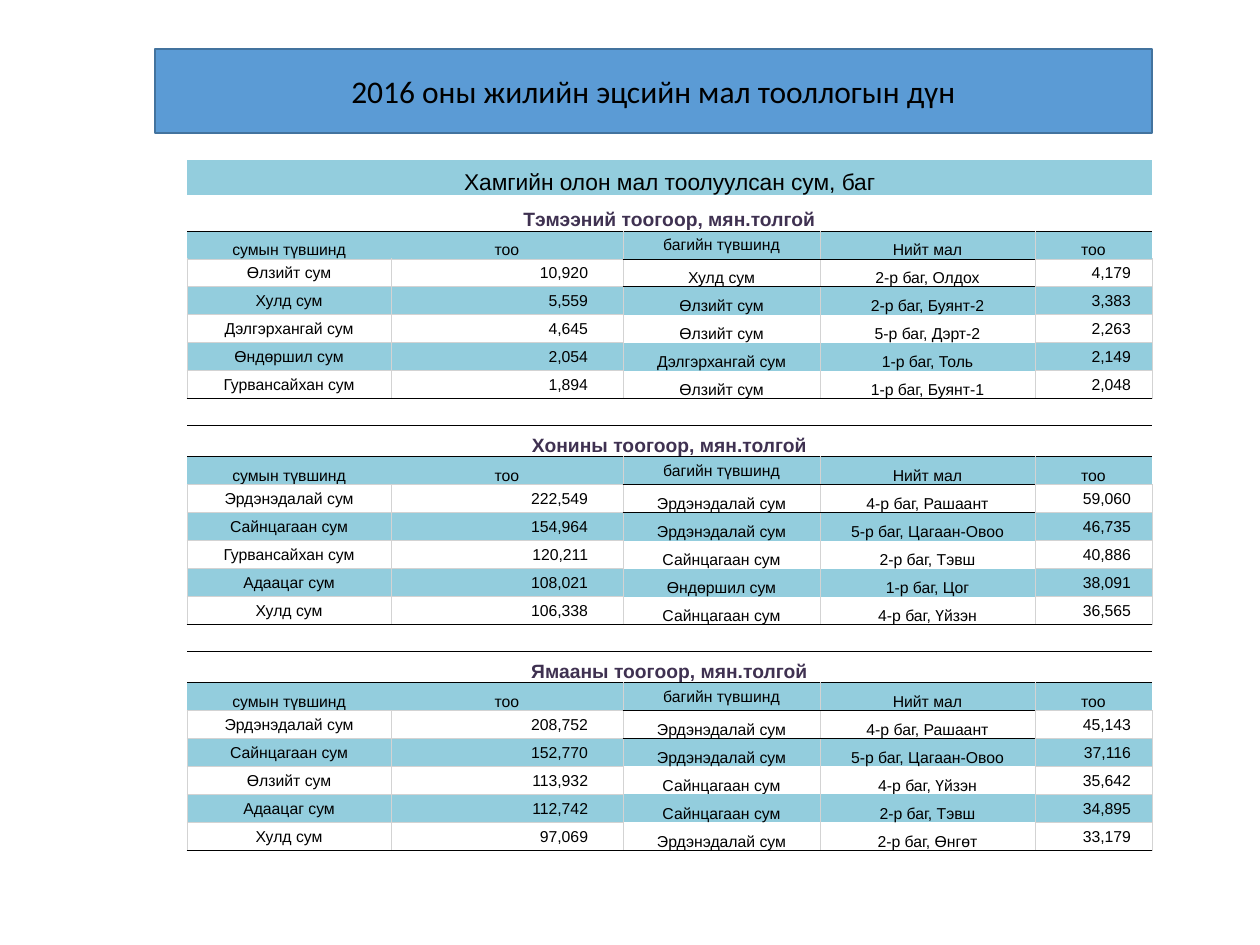
from typing import NamedTuple, Optional

from lxml.etree import SubElement
from pptx import Presentation
from pptx.dml.color import RGBColor
from pptx.enum.text import MSO_ANCHOR, PP_ALIGN
from pptx.oxml.ns import qn
from pptx.util import Emu, Pt

BLACK = RGBColor(0x00, 0x00, 0x00)
GREY = RGBColor(0xD3, 0xD3, 0xD3)
PLUM = RGBColor(0x3F, 0x31, 0x51)
TEAL = RGBColor(0x93, 0xCD, 0xDD)
BLUE = RGBColor(0x5B, 0x9B, 0xD5)
NAVY = RGBColor(0x43, 0x73, 0x9E)

SCALE = 914400 / 126
COLS = (204, 232, 197, 215, 117)
TOP_ROW, NAME_ROW, HEAD_ROW, BODY_ROW, GAP_ROW = 35, 36, 28, 28, 27
NEXT_NAME = 31
HEADS = ("сумын түвшинд", "тоо", "багийн түвшинд", "Нийт мал", "тоо")
PADS = {1: 35, 4: 21}  # right margin of the number columns
PLAIN = "{2D5ABB26-0587-4C30-8999-92F81FD0307C}"  # table style without grid


class Herd(NamedTuple):
    name: str
    rows: tuple


class Look(NamedTuple):
    size: float = 9
    color: RGBColor = BLACK
    bold: bool = False
    fill: Optional[RGBColor] = None
    anchor: MSO_ANCHOR = MSO_ANCHOR.BOTTOM
    align: PP_ALIGN = PP_ALIGN.CENTER
    pad: int = 1


HERDS = (
    Herd("Тэмээний тоогоор, мян.толгой", (
        ("Өлзийт сум", "10,920", "Хулд сум", "2-р баг, Олдох", "4,179"),
        ("Хулд сум", "5,559", "Өлзийт сум", "2-р баг, Буянт-2", "3,383"),
        ("Дэлгэрхангай сум", "4,645", "Өлзийт сум", "5-р баг, Дэрт-2", "2,263"),
        ("Өндөршил сум", "2,054", "Дэлгэрхангай сум", "1-р баг, Толь", "2,149"),
        ("Гурвансайхан сум", "1,894", "Өлзийт сум", "1-р баг, Буянт-1", "2,048"),
    )),
    Herd("Хонины тоогоор, мян.толгой", (
        ("Эрдэнэдалай сум", "222,549", "Эрдэнэдалай сум", "4-р баг, Рашаант", "59,060"),
        ("Сайнцагаан сум", "154,964", "Эрдэнэдалай сум", "5-р баг, Цагаан-Овоо", "46,735"),
        ("Гурвансайхан сум", "120,211", "Сайнцагаан сум", "2-р баг, Тэвш", "40,886"),
        ("Адаацаг сум", "108,021", "Өндөршил сум", "1-р баг, Цог", "38,091"),
        ("Хулд сум", "106,338", "Сайнцагаан сум", "4-р баг, Үйзэн", "36,565"),
    )),
    Herd("Ямааны тоогоор, мян.толгой", (
        ("Эрдэнэдалай сум", "208,752", "Эрдэнэдалай сум", "4-р баг, Рашаант", "45,143"),
        ("Сайнцагаан сум", "152,770", "Эрдэнэдалай сум", "5-р баг, Цагаан-Овоо", "37,116"),
        ("Өлзийт сум", "113,932", "Сайнцагаан сум", "4-р баг, Үйзэн", "35,642"),
        ("Адаацаг сум", "112,742", "Сайнцагаан сум", "2-р баг, Тэвш", "34,895"),
        ("Хулд сум", "97,069", "Эрдэнэдалай сум", "2-р баг, Өнгөт", "33,179"),
    )),
)


def px(n: int) -> Emu:
    return Emu(round(n * SCALE))


def assign(target, values: dict) -> None:
    for key, value in values.items():
        setattr(target, key, value)


def draw_edges(cell, edges: dict) -> None:
    """Edges maps sides L, R, T, B to colours; call before the cell is filled."""
    props = cell._tc.get_or_add_tcPr()
    for side in "LRTB":
        if side in edges:
            line = SubElement(props, qn(f"a:ln{side}"), w=str(Pt(0.5)))
            paint = SubElement(line, qn("a:solidFill"))
            SubElement(paint, qn("a:srgbClr"), val=str(edges[side]))


def fill_cell(cell, text: str, look: Look, edges: dict) -> None:
    draw_edges(cell, edges)
    assign(cell, {"margin_left": px(1), "margin_right": px(look.pad),
                  "margin_top": px(1), "margin_bottom": 0,
                  "vertical_anchor": look.anchor})
    if look.fill is None:
        cell.fill.background()
    else:
        cell.fill.solid()
        cell.fill.fore_color.rgb = look.fill
    para = cell.text_frame.paragraphs[0]
    para.alignment = look.align
    if not text:
        SubElement(para._p, qn("a:endParaRPr"), sz=str(round(look.size * 100)))
        return
    run = para.add_run()
    run.text = text
    assign(run.font, {"name": "Arial", "size": Pt(look.size), "bold": look.bold})
    run.font.color.rgb = look.color


def head_edges(col: int) -> dict:
    edges = {"T": BLACK, "B": BLACK if col in (2, 3) else GREY}
    if col in (2, 3):
        edges["L"] = GREY
    if col in (1, 2):
        edges["R"] = GREY
    return edges


def body_edges(col: int, first: bool, last: bool) -> dict:
    if col in (2, 3):
        edges = {"L" if col == 2 else "R": GREY}
        if first:
            edges["T"] = BLACK
    else:
        edges = dict.fromkeys("LRTB", GREY)
    if last:
        edges["B"] = BLACK
    return edges


def body_look(col: int, index: int) -> Look:
    return Look(fill=TEAL if index % 2 else None,
                anchor=MSO_ANCHOR.BOTTOM if col in (2, 3) else MSO_ANCHOR.MIDDLE,
                align=PP_ALIGN.RIGHT if col in PADS else PP_ALIGN.CENTER,
                pad=PADS.get(col, 1))


def fill_wide(table, row: int, text: str, look: Look, edges: dict) -> None:
    """Fill one cell that spans the whole row."""
    table.cell(row, 0).merge(table.cell(row, len(COLS) - 1))
    for col in range(len(COLS)):
        fill_cell(table.cell(row, col), "" if col else text, look, edges)


def fill_herd(table, top: int, herd: Herd) -> None:
    fill_wide(table, top, herd.name, Look(11, PLUM, True), {"B": BLACK})
    for col, text in enumerate(HEADS):
        anchor = MSO_ANCHOR.MIDDLE if col == 2 else MSO_ANCHOR.BOTTOM
        fill_cell(table.cell(top + 1, col), text,
                  Look(fill=TEAL, anchor=anchor), head_edges(col))
    end = len(herd.rows) - 1
    for i, row in enumerate(herd.rows):
        for col, text in enumerate(row):
            fill_cell(table.cell(top + 2 + i, col), text, body_look(col, i),
                      body_edges(col, i == 0, i == end))


def add_title(slide) -> None:
    title = slide.shapes.title
    assign(title, {"left": px(155), "top": px(49), "width": px(997), "height": px(84)})
    title.fill.solid()
    title.fill.fore_color.rgb = BLUE
    title.line.color.rgb = NAVY
    title.line.width = Pt(1)
    frame = title.text_frame
    frame.vertical_anchor = MSO_ANCHOR.MIDDLE
    para = frame.paragraphs[0]
    para.alignment = PP_ALIGN.CENTER
    run = para.add_run()
    run.text = "2016 оны жилийн эцсийн мал тооллогын дүн"
    assign(run.font, {"name": "Calibri", "size": Pt(18)})
    run.font.color.rgb = BLACK


def add_count(slide) -> None:
    sizes = [TOP_ROW]
    for i, herd in enumerate(HERDS):
        sizes += [GAP_ROW, NEXT_NAME] if i else [NAME_ROW]
        sizes += [HEAD_ROW] + [BODY_ROW] * len(herd.rows)
    frame = slide.shapes.add_table(len(sizes), len(COLS), px(187), px(160),
                                   px(sum(COLS)), px(sum(sizes)))
    table = frame.table
    assign(table, {"first_row": False, "horz_banding": False})
    table._tbl.find(".//" + qn("a:tableStyleId")).text = PLAIN
    for col, width in zip(table.columns, COLS):
        col.width = px(width)
    for row, height in zip(table.rows, sizes):
        row.height = px(height)
    fill_wide(table, 0, "Хамгийн олон мал тоолуулсан сум, баг", Look(13, fill=TEAL), {})
    top = 1
    for i, herd in enumerate(HERDS):
        if i:
            for col in range(len(COLS)):
                fill_cell(table.cell(top, col), "", Look(), {"T": BLACK})
            top += 1
        fill_herd(table, top, herd)
        top += 2 + len(herd.rows)


def main() -> None:
    deck = Presentation()
    assign(deck, {"slide_width": px(1260), "slide_height": px(945)})
    slide = deck.slides.add_slide(deck.slide_layouts[5])
    add_title(slide)
    add_count(slide)
    deck.save("out.pptx")


if __name__ == "__main__":
    main()
